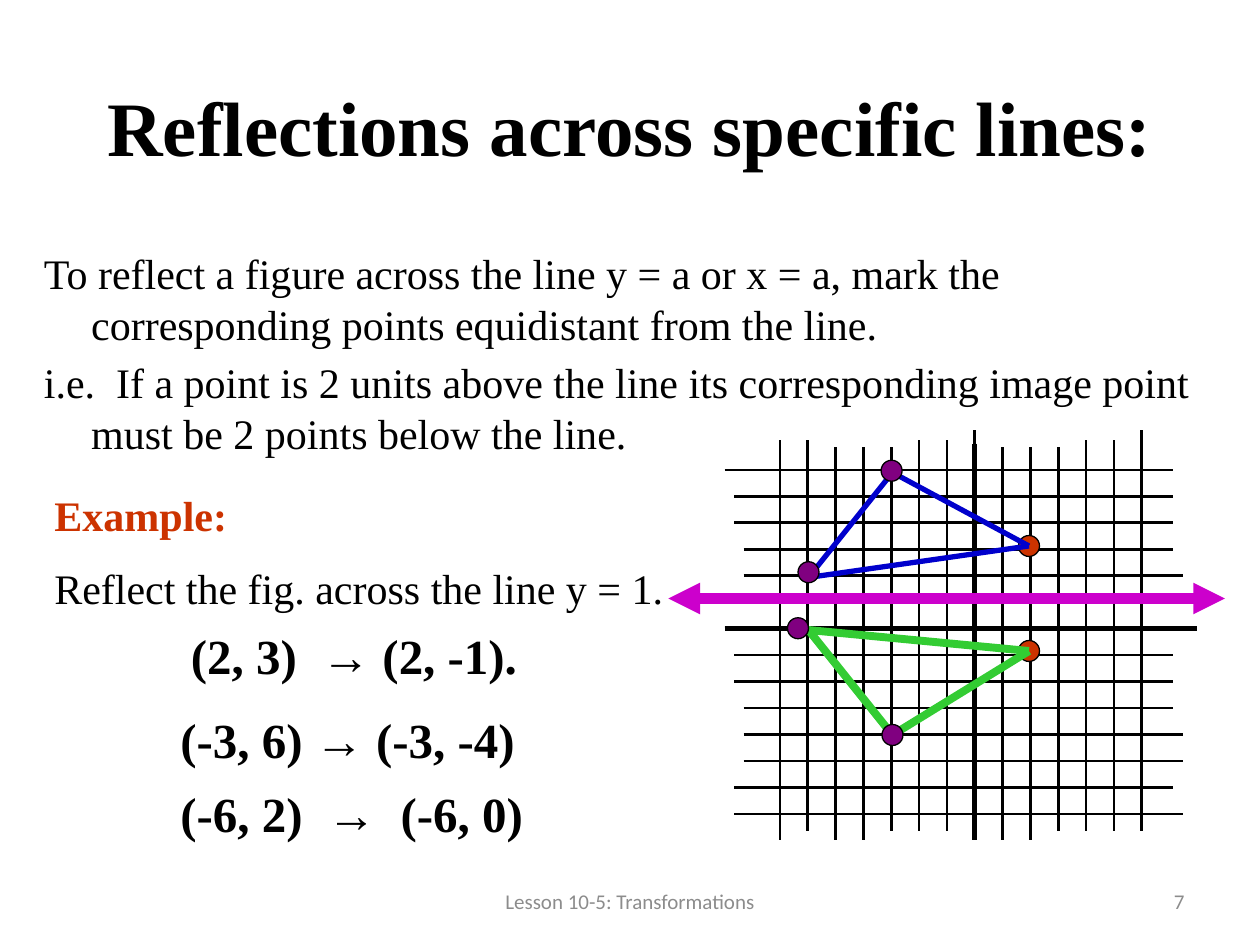
from lxml.etree import SubElement
from pptx import Presentation
from pptx.dml.color import RGBColor
from pptx.enum.shapes import MSO_CONNECTOR as Connector, MSO_SHAPE as Shape
from pptx.enum.text import MSO_ANCHOR as Anchor, PP_ALIGN as Align
from pptx.oxml.ns import qn
from pptx.util import Pt

COLORS = {
    "ink": "000000",
    "grey": "8C8C8C",
    "orange": "CC3300",
    "arrow": "CC00CC",
    "figure": "0000CC",
    "image": "33CC33",
    "purple": "800080",
}
SERIF = "Times New Roman"
ROW_LEFTS = [0, 5.5, 5.5, 11, 11, 11] * 2 + [5.5, 5.5]
ROW_RIGHTS = [256.5, 256.5, 256.5, 256.5, 262, 262] * 2 + [256.5, 262]
COLUMN_TOPS = [5.5, 5.5] + [9.5, 9.5, 9.5, 5.5, 5.5, 0] * 2
COLUMN_BOTTOMS = [234, 229] + [234, 234, 229, 229, 229, 229] * 2


def color(name):
    return RGBColor.from_string(COLORS[name])


def add_text(page, box, text, size=24, font=SERIF, ink="ink", bold=False,
             align=Align.LEFT, anchor=Anchor.TOP, before=0, hanging=0, wrap=True):
    frame = page.shapes.add_textbox(*map(Pt, box)).text_frame
    frame.word_wrap = wrap
    frame.vertical_anchor = anchor
    for index, line in enumerate(text.split("\n")):
        para = frame.paragraphs[0] if index == 0 else frame.add_paragraph()
        para.alignment = align
        para.space_before = Pt(before)
        if hanging:
            properties = para._p.get_or_add_pPr()
            properties.set("marL", str(Pt(hanging)))
            properties.set("indent", str(-Pt(hanging)))
        span = para.add_run()
        span.text = line
        span.font.size = Pt(size)
        span.font.name = font
        span.font.bold = bold
        span.font.color.rgb = color(ink)


def add_line(page, box, start, end, ink="ink", width=1.5, arrows=False):
    left, top = box[:2]
    line = page.shapes.add_connector(
        Connector.STRAIGHT, Pt(left + start[0]), Pt(top + start[1]),
        Pt(left + end[0]), Pt(top + end[1]))
    line.line.color.rgb = color(ink)
    line.line.width = Pt(width)
    if arrows:
        outline = line.line._get_or_add_ln()
        for tag in ("a:headEnd", "a:tailEnd"):
            SubElement(outline, qn(tag), type="triangle")
    SubElement(line._element.spPr, qn("a:effectLst"))


def add_dot(page, box, center, fill, size=12):
    left = box[0] + center[0] - size / 2
    top = box[1] + center[1] - size / 2
    dot = page.shapes.add_shape(Shape.OVAL, Pt(left), Pt(top), Pt(size), Pt(size))
    dot.shadow.inherit = False
    dot.fill.solid()
    dot.fill.fore_color.rgb = color(fill)
    dot.line.color.rgb = color("ink")
    dot.line.width = Pt(0.75)


def add_grid(page, box):
    for index, (left, right) in enumerate(zip(ROW_LEFTS, ROW_RIGHTS)):
        y = 22.5 + 15.12 * index
        add_line(page, box, (left, y), (right, y))
    for index, (top, bottom) in enumerate(zip(COLUMN_TOPS, COLUMN_BOTTOMS)):
        x = 31.7 + 15.9 * index
        add_line(page, box, (x, top), (x, bottom))
    add_line(page, box, (0, 113.2), (270, 113.2), width=3)
    add_line(page, box, (143, 7.5), (143, 234), width=3)


def add_triangle(page, box, corners, ink, width):
    for start, end in zip(corners, corners[1:] + corners[:1]):
        add_line(page, box, start, end, ink, width)


def add_reflection(page, box):
    figure = [(174, 66), (96, 24), (48, 84)]
    image = [(174, 126), (48, 114), (96, 174)]
    add_line(page, box, (-32, 96), (286, 96), "arrow", 6, arrows=True)
    for corners in (figure, image):
        add_dot(page, box, corners[0], "orange")
    add_triangle(page, box, figure, "figure", 3)
    add_triangle(page, box, image, "image", 4.5)
    for center in [(42, 113), (96, 174), (95.5, 23), (48, 81)]:
        add_dot(page, box, center, "purple")


def add_explanation(page, box):
    add_text(page, box,
             "To reflect a figure across the line y = a or x = a, mark the "
             "corresponding points equidistant from the line.\n"
             "i.e.  If a point is 2 units above the line its corresponding "
             "image point must be 2 points below the line.",
             before=4.8, hanging=27)


def add_example(page, box):
    left, top, width, height = box
    add_text(page, (left, top, 126, 36), "Example:", ink="orange", bold=True)
    add_text(page, (left, top + 42, width, 36), "Reflect the fig. across the line y = 1.")
    pairs = [
        (78, 78, "(2, 3)  → (2, -1)."),
        (72, 126, "(-3, 6) → (-3, -4)"),
        (72, 168, "(-6, 2)  →  (-6, 0)"),
    ]
    for x, y, text in pairs:
        add_text(page, (left + x, top + y, 234, 41), text, size=28, bold=True)


def add_footer(page, box):
    left, top, width, height = box
    style = dict(size=12, font="Calibri", ink="grey", anchor=Anchor.MIDDLE)
    add_text(page, (left, top, 228, height), "Lesson 10-5: Transformations",
             align=Align.CENTER, **style)
    add_text(page, (left + width - 168, top, 168, height), "7",
             align=Align.RIGHT, **style)


def main():
    deck = Presentation()
    deck.slide_width, deck.slide_height = Pt(720), Pt(540)
    page = deck.slides.add_slide(deck.slide_layouts[6])
    graph = (414, 246, 270, 234)
    add_footer(page, (246, 500.5, 438, 28.75))
    add_text(page, (48, 36, 624, 72), "Reflections across specific lines:", size=44,
             bold=True, align=Align.CENTER, anchor=Anchor.MIDDLE)
    add_explanation(page, (18, 138, 672, 318))
    add_grid(page, graph)
    add_reflection(page, graph)
    add_example(page, (24, 276, 438, 209))
    deck.save("out.pptx")


if __name__ == "__main__":
    main()
